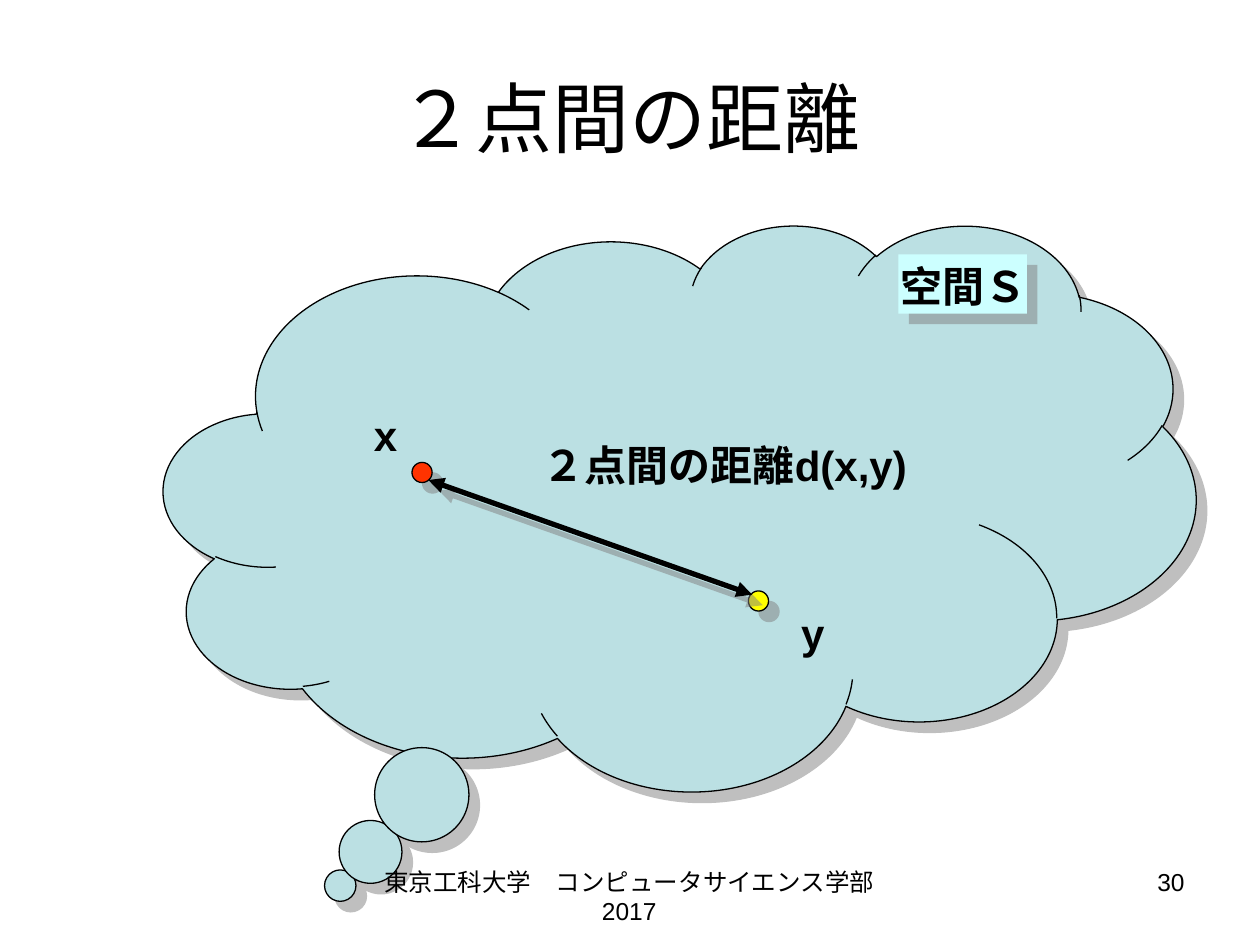
"""Build the slide on the distance between two points of a space."""
from lxml.etree import SubElement
from pptx import Presentation
from pptx.dml.color import RGBColor
from pptx.enum.shapes import MSO_CONNECTOR as Connector, MSO_SHAPE as Shape
from pptx.enum.text import MSO_ANCHOR as Anchor, PP_ALIGN as Align
from pptx.oxml.ns import qn
from pptx.util import Inches, Pt

presentation = Presentation()
presentation.slide_width, presentation.slide_height = Inches(10), Inches(7.5)
slide = presentation.slides.add_slide(presentation.slide_layouts[6])
cell = presentation.slide_width / 100


def add_text(text, left, top, width, height, size=24, bold=True,
             align=Align.LEFT, anchor=Anchor.TOP):
    box = slide.shapes.add_textbox(*(round(n * cell) for n in (left, top, width, height)))
    frame = box.text_frame
    frame.word_wrap = True
    frame.vertical_anchor = anchor
    paragraph = frame.paragraphs[0]
    paragraph.alignment = align
    run = paragraph.add_run()
    run.text = text
    run.font.name, run.font.size, run.font.bold = "Arial", Pt(size), bold
    run.font.color.rgb = RGBColor.from_string("000000")


def finish(shape, line=None, line_width=0.75, fill=None):
    if fill:
        shape.fill.solid()
        shape.fill.fore_color.rgb = RGBColor.from_string(fill)
    if line:
        shape.line.color.rgb = RGBColor.from_string(line)
        shape.line.width = Pt(line_width)
    else:
        shape.line.fill.background()
    effects = SubElement(shape._element.spPr, qn("a:effectLst"))
    shadow = SubElement(effects, qn("a:outerShdw"), dist=str(Pt(8.5)),
                        dir="2700000", algn="ctr", rotWithShape="0")
    color = SubElement(shadow, qn("a:srgbClr"), val="808080")
    SubElement(color, qn("a:alpha"), val="50000")


add_text("２点間の距離", 5, 3, 90, 12.5, size=44, bold=False,
         align=Align.CENTER, anchor=Anchor.MIDDLE)

for kind, left, top, width, height, fill, line in (
    (Shape.CLOUD_CALLOUT, 13, 17.8, 81.9, 44.9, "BBE0E3", "000000"),
    (Shape.OVAL, 32.7, 36.7, 1.6, 1.6, "FF3300", "000000"),
    (Shape.OVAL, 59.4, 46.9, 1.6, 1.6, "FFFF00", "000000"),
    (Shape.RECTANGLE, 71.3, 20.2, 10.2, 4.7, "CCFFFF", None),
):
    shape = slide.shapes.add_shape(
        kind, *(round(n * cell) for n in (left, top, width, height)))
    if kind == Shape.CLOUD_CALLOUT:
        shape.adjustments[0], shape.adjustments[1] = -0.329, 0.669
    finish(shape, line=line, fill=fill)

distance = slide.shapes.add_connector(
    Connector.STRAIGHT, *(round(n * cell) for n in (34, 38.1, 59.7, 47.2)))
finish(distance, line="000000", line_width=3)
for end in ("a:headEnd", "a:tailEnd"):
    SubElement(distance.line._get_or_add_ln(), qn(end), type="triangle")

for label, left, top, width in (
    ("２点間の距離d(x,y)", 42.1, 34.4, 33.1),
    ("x", 28.7, 32, 4.7),
    ("y", 62.6, 47.7, 3.1),
    ("空間Ｓ", 70.5, 20.2, 12.6),
):
    add_text(label, left, top, width, 5)

for footer, left, width, align in (
    ("東京工科大学　コンピュータサイエンス学部 2017", 28.3, 43.3, Align.CENTER),
    ("30", 71.7, 23.3, Align.RIGHT),
):
    add_text(footer, left, 68.3, width, 5.2, size=14, bold=False, align=align)

presentation.save("out.pptx")
